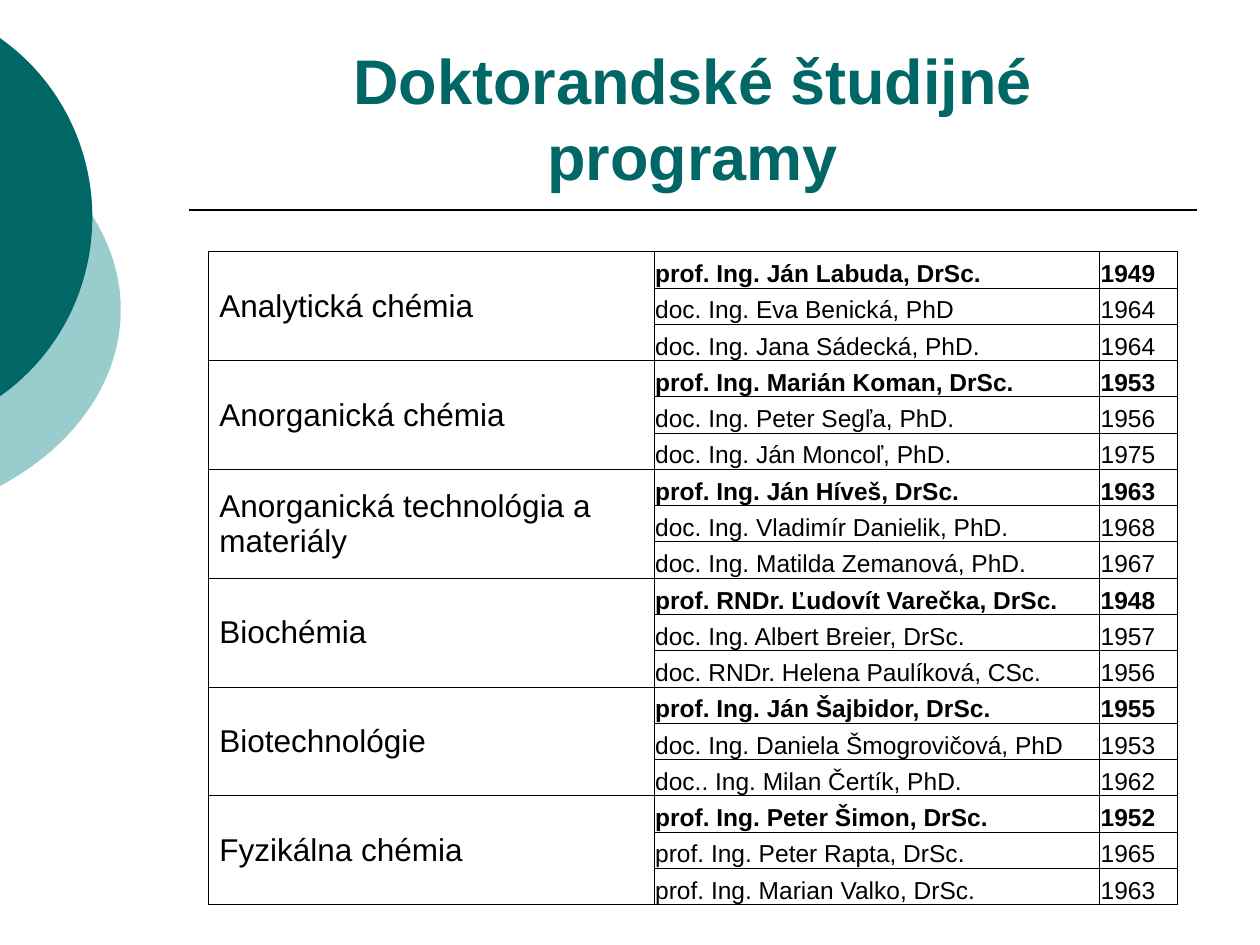
import pptx
import pptx.dml.color
import pptx.enum.shapes
import pptx.enum.text
import pptx.oxml
import pptx.oxml.ns
import pptx.util
from lxml import etree

Pt = pptx.util.Pt
Anchor = pptx.enum.text.MSO_ANCHOR
Align = pptx.enum.text.PP_ALIGN

GROUPS = [
    ("Analytická chémia", [("prof. Ing. Ján Labuda, DrSc.", "1949"),
                           ("doc. Ing. Eva Benická, PhD", "1964"),
                           ("doc. Ing. Jana Sádecká, PhD.", "1964")]),
    ("Anorganická chémia", [("prof. Ing. Marián Koman, DrSc.", "1953"),
                            ("doc. Ing. Peter Segľa, PhD.", "1956"),
                            ("doc. Ing. Ján Moncoľ, PhD.", "1975")]),
    ("Anorganická technológia a materiály", [("prof. Ing. Ján Híveš, DrSc.", "1963"),
                                             ("doc. Ing. Vladimír Danielik, PhD.", "1968"),
                                             ("doc. Ing. Matilda Zemanová, PhD.", "1967")]),
    ("Biochémia", [("prof. RNDr. Ľudovít Varečka, DrSc.", "1948"),
                   ("doc. Ing. Albert Breier, DrSc.", "1957"),
                   ("doc. RNDr. Helena Paulíková, CSc.", "1956")]),
    ("Biotechnológie", [("prof. Ing. Ján Šajbidor, DrSc.", "1955"),
                        ("doc. Ing. Daniela Šmogrovičová, PhD", "1953"),
                        ("doc.. Ing. Milan Čertík, PhD.", "1962")]),
    ("Fyzikálna chémia", [("prof. Ing. Peter Šimon, DrSc.", "1952"),
                          ("prof. Ing. Peter Rapta, DrSc.", "1965"),
                          ("prof. Ing. Marian Valko, DrSc.", "1963")]),
]


def color(code):
    return pptx.dml.color.RGBColor.from_string(code)


def write(frame, text, size=14, bold=False, ink="000000", align=Align.LEFT, lead=None):
    par = frame.paragraphs[0]
    par.alignment = align
    if lead:
        par.line_spacing = Pt(lead)
    run = par.add_run()
    run.text = text
    font = run.font
    font.name, font.size, font.bold = "Arial", Pt(size), bold
    font.color.rgb = color(ink)


def border(cell):
    props = cell._tc.get_or_add_tcPr()
    space = pptx.oxml.ns.nsdecls("a")
    for spot, side in enumerate(("lnL", "lnR", "lnT", "lnB")):
        props.insert(spot, pptx.oxml.parse_xml(
            f'<a:{side} {space} w="{Pt(0.5)}"><a:solidFill>'
            f'<a:srgbClr val="000000"/></a:solidFill></a:{side}>'))


class Deck:
    """Builds the study programme slide in one style."""

    teal, pale, black, white = "006666", "99CCCC", "000000", "FFFFFF"

    def __init__(self):
        self.file = pptx.Presentation()
        self.file.slide_width, self.file.slide_height = Pt(720), Pt(540)
        self.slide = self.file.slides.add_slide(self.file.slide_layouts[5])

    def title(self, text, left, top, width, height):
        box = self.slide.shapes.title
        box.left, box.top, box.width, box.height = Pt(left), Pt(top), Pt(width), Pt(height)
        frame = box.text_frame
        frame.word_wrap = True
        frame.auto_size = pptx.enum.text.MSO_AUTO_SIZE.NONE
        frame.vertical_anchor = Anchor.BOTTOM
        write(frame, text, size=36, bold=True, ink=self.teal, align=Align.CENTER)

    def disc(self, fill, left, top, width, height):
        shape = self.slide.shapes.add_shape(
            pptx.enum.shapes.MSO_SHAPE.OVAL, Pt(left), Pt(top), Pt(width), Pt(height))
        shape.shadow.inherit = False
        shape.fill.solid()
        shape.fill.fore_color.rgb = color(fill)
        shape.line.fill.background()

    def rule(self, left, right, top):
        line = self.slide.shapes.add_connector(
            pptx.enum.shapes.MSO_CONNECTOR.STRAIGHT, Pt(left), Pt(top), Pt(right), Pt(top))
        line.line.color.rgb = color(self.black)
        line.line.width = Pt(1)
        etree.SubElement(line._element.spPr, pptx.oxml.ns.qn("a:effectLst"))

    def table(self, groups, left, top, widths, step):
        count = sum(len(staff) for _, staff in groups)
        grid = self.slide.shapes.add_table(
            count, len(widths), Pt(left), Pt(top), Pt(sum(widths)), Pt(count * step)).table
        grid.first_row = grid.horz_banding = False
        for col, width in zip(grid.columns, widths):
            col.width = Pt(width)
        for row in grid.rows:
            row.height = Pt(step)
            for spot, cell in enumerate(row.cells):
                self.style(cell, 6.5 if spot == 0 else 0.6)
        row = 0
        for field, staff in groups:
            head = grid.cell(row, 0)
            head.merge(grid.cell(row + len(staff) - 1, 0))
            write(head.text_frame, field, size=18)
            for place, person in enumerate(staff):
                for col, text in enumerate(person, 1):
                    write(grid.cell(row, col).text_frame, text, bold=place == 0, lead=20)
                row += 1

    def style(self, cell, inset):
        cell.margin_left = Pt(inset)
        cell.margin_right = cell.margin_top = Pt(0.6)
        cell.margin_bottom = 0
        cell.vertical_anchor = Anchor.MIDDLE
        cell.fill.solid()
        cell.fill.fore_color.rgb = color(self.white)
        border(cell)


def main():
    deck = Deck()
    deck.disc(deck.pale, -255, 54, 324, 246)
    deck.disc(deck.teal, -190.5, 0, 243.25, 248.25)
    deck.rule(108, 684, 120)
    deck.title("Doktorandské študijné programy", 108, 24, 575.75, 90)
    deck.table(GROUPS, 118.9, 143.8, (254.9, 254.6, 44.5), 20.73)
    deck.file.save("out.pptx")


if __name__ == "__main__":
    main()
